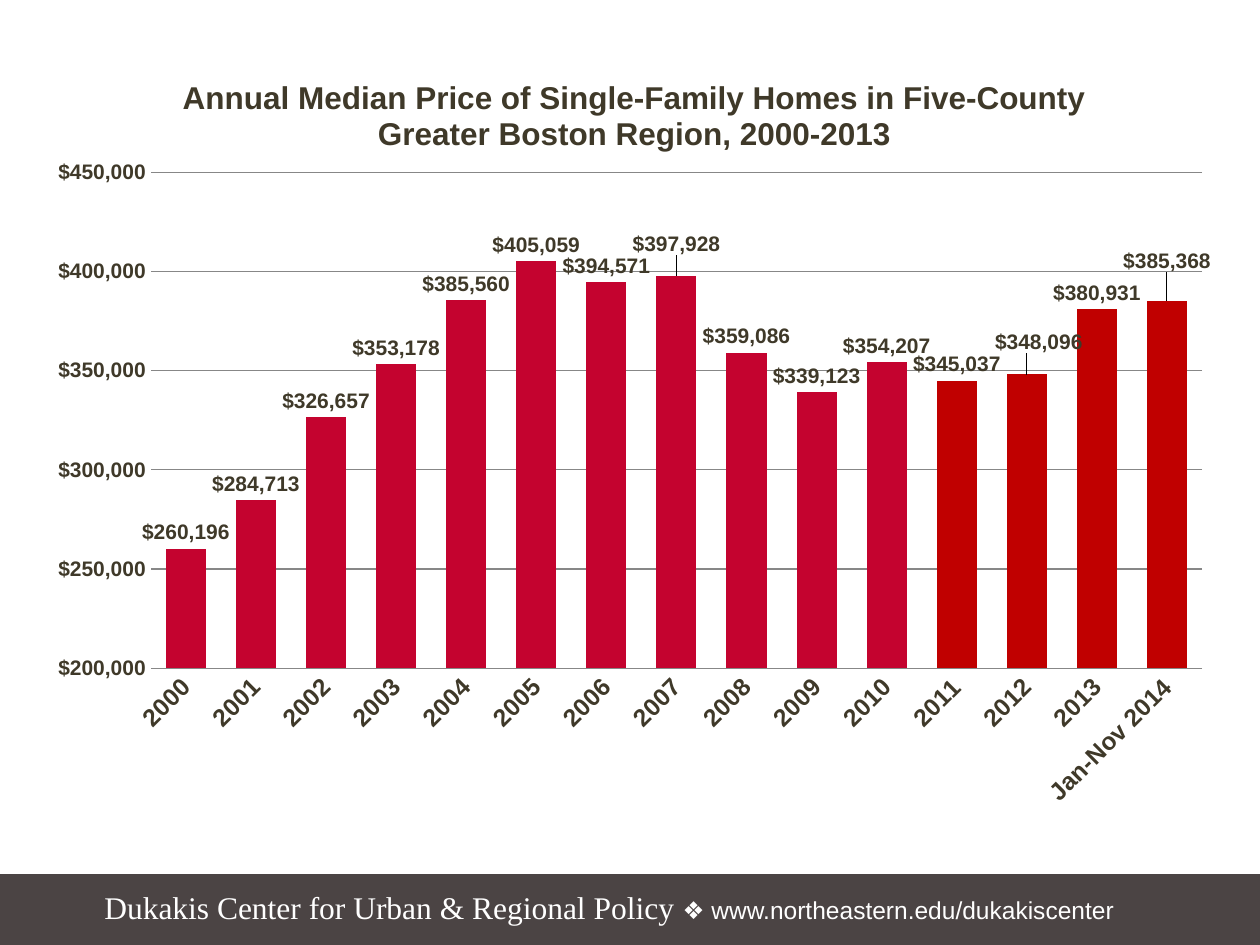
import pptx
import pptx.chart.data
import pptx.dml.color
import pptx.enum.chart
import pptx.enum.shapes
import pptx.enum.text
import pptx.oxml
import pptx.oxml.ns
import pptx.util

Inches, Pt = pptx.util.Inches, pptx.util.Pt
qn = pptx.oxml.ns.qn
NS = 'xmlns:c="http://schemas.openxmlformats.org/drawingml/2006/chart"'
FORMAT = '"$"#,##0'
INK, CRIMSON, RED, GRAY, SLATE = "3F3929", "C4032F", "C00000", "878787", "4B4444"
PRICES = {
    "2000": 260196, "2001": 284713, "2002": 326657, "2003": 353178,
    "2004": 385560, "2005": 405059, "2006": 394571, "2007": 397928,
    "2008": 359086, "2009": 339123, "2010": 354207, "2011": 345037,
    "2012": 348096, "2013": 380931, "Jan-Nov 2014": 385368,
}
FIRST_RED = 11
LABEL_SHIFTS = {7: (0, -0.02), 12: (0.01, -0.02), 14: (0, -0.03)}


def color(value):
    return pptx.dml.color.RGBColor.from_string(value)


def style(font, size, bold=False, name="Arial", ink=INK):
    font.size = Pt(size)
    font.bold = bold
    font.name = name
    font.color.rgb = color(ink)


def set_layout(parent, index, **values):
    for old in parent.findall(qn("c:layout")):
        parent.remove(old)
    tags = "".join(f'<c:{k} val="{v}"/>' for k, v in values.items())
    parent.insert(index, pptx.oxml.parse_xml(
        f"<c:layout {NS}><c:manualLayout>{tags}</c:manualLayout></c:layout>"))


def style_axes(chart):
    cat, val = chart.category_axis, chart.value_axis
    for axis, size in ((cat, 14), (val, 12)):
        axis.major_tick_mark = pptx.enum.chart.XL_TICK_MARK.NONE
        axis.minor_tick_mark = pptx.enum.chart.XL_TICK_MARK.NONE
        style(axis.tick_labels.font, size, True)
    cat.format.line.color.rgb = color(GRAY)
    body = cat._element.find(qn("c:txPr")).find(qn("a:bodyPr"))
    body.set("rot", "-2700000")
    body.set("vert", "horz")
    val.minimum_scale, val.maximum_scale, val.major_unit = 200000, 450000, 50000
    val.tick_labels.number_format = FORMAT
    val.tick_labels.number_format_is_linked = False
    val.format.line.fill.background()
    val.major_gridlines.format.line.color.rgb = color(GRAY)


def style_bars(plot):
    plot.gap_width, plot.overlap = 75, -25
    plot.vary_by_categories = False
    series = plot.series[0]
    series.format.fill.solid()
    series.format.fill.fore_color.rgb = color(CRIMSON)
    for i in range(FIRST_RED, len(PRICES)):
        fill = series.points[i].format.fill
        fill.solid()
        fill.fore_color.rgb = color(RED)
    outside = pptx.enum.chart.XL_LABEL_POSITION.OUTSIDE_END
    labels = series.data_labels
    labels.show_value = True
    labels.number_format = FORMAT
    labels.number_format_is_linked = False
    labels.position = outside
    style(labels.font, 12, True)
    for i, (dx, dy) in LABEL_SHIFTS.items():
        label = series.points[i].data_label
        style(label.font, 12, True)
        label.position = outside
    for element in labels._element.findall(qn("c:dLbl")):
        dx, dy = LABEL_SHIFTS[int(element.find(qn("c:idx")).get("val"))]
        set_layout(element, 1, x=dx, y=dy)
        number = pptx.oxml.parse_xml(f'<c:numFmt {NS} sourceLinked="0"/>')
        number.set("formatCode", FORMAT)
        element.insert(2, number)


def add_price_chart(s, left, top, width, height):
    data = pptx.chart.data.CategoryChartData()
    data.categories = list(PRICES)
    data.add_series("Series 1", list(PRICES.values()))
    chart = s.shapes.add_chart(
        pptx.enum.chart.XL_CHART_TYPE.COLUMN_CLUSTERED,
        left, top, width, height, data).chart
    style(chart.font, 10)
    chart.has_legend = False
    chart.has_title = True
    title = chart.chart_title
    r = title.text_frame.paragraphs[0].add_run()
    r.text = ("Annual Median Price of Single-Family Homes in Five-County "
              "Greater Boston Region, 2000-2013")
    style(r.font, 18, True)
    title.include_in_layout = False
    set_layout(title._element, 1, xMode="edge", yMode="edge", x=0.12, y=0.04)
    set_layout(chart._chartSpace.chart.plotArea, 0, layoutTarget="inner",
               xMode="edge", yMode="edge", x=0.098, y=0.169, w=0.882, h=0.635)
    style_axes(chart)
    style_bars(chart.plots[0])


def add_footer(s, left, top, width, height):
    bar = s.shapes.add_shape(
        pptx.enum.shapes.MSO_SHAPE.RECTANGLE, left, top, width, height)
    bar.shadow.inherit = False
    bar.fill.solid()
    bar.fill.fore_color.rgb = color(SLATE)
    bar.line.color.rgb = color(SLATE)
    bar.line.width = Pt(0.75)
    box = s.shapes.add_textbox(
        left + Inches(0.74), top + Inches(0.06), Inches(8.53), Inches(0.4))
    tf = box.text_frame
    tf.word_wrap = True
    tf.auto_size = pptx.enum.text.MSO_AUTO_SIZE.SHAPE_TO_FIT_TEXT
    p = tf.paragraphs[0]
    for text, size, name in (
            ("Dukakis Center for Urban & Regional Policy ", 18, "Times New Roman"),
            ("❖ www.northeastern.edu/dukakiscenter", 14, "Arial")):
        r = p.add_run()
        r.text = text
        style(r.font, size, name=name, ink="FFFFFF")


def main():
    prs = pptx.Presentation()
    prs.slide_width, prs.slide_height = Inches(10), Inches(7.5)
    s = prs.slides.add_slide(prs.slide_layouts[6])
    add_footer(s, Inches(-0.01), Inches(6.94), Inches(10.04), Inches(0.58))
    add_price_chart(s, Inches(0.27), Inches(0.32), Inches(9.46), Inches(6.2))
    prs.save("out.pptx")


if __name__ == "__main__":
    main()
